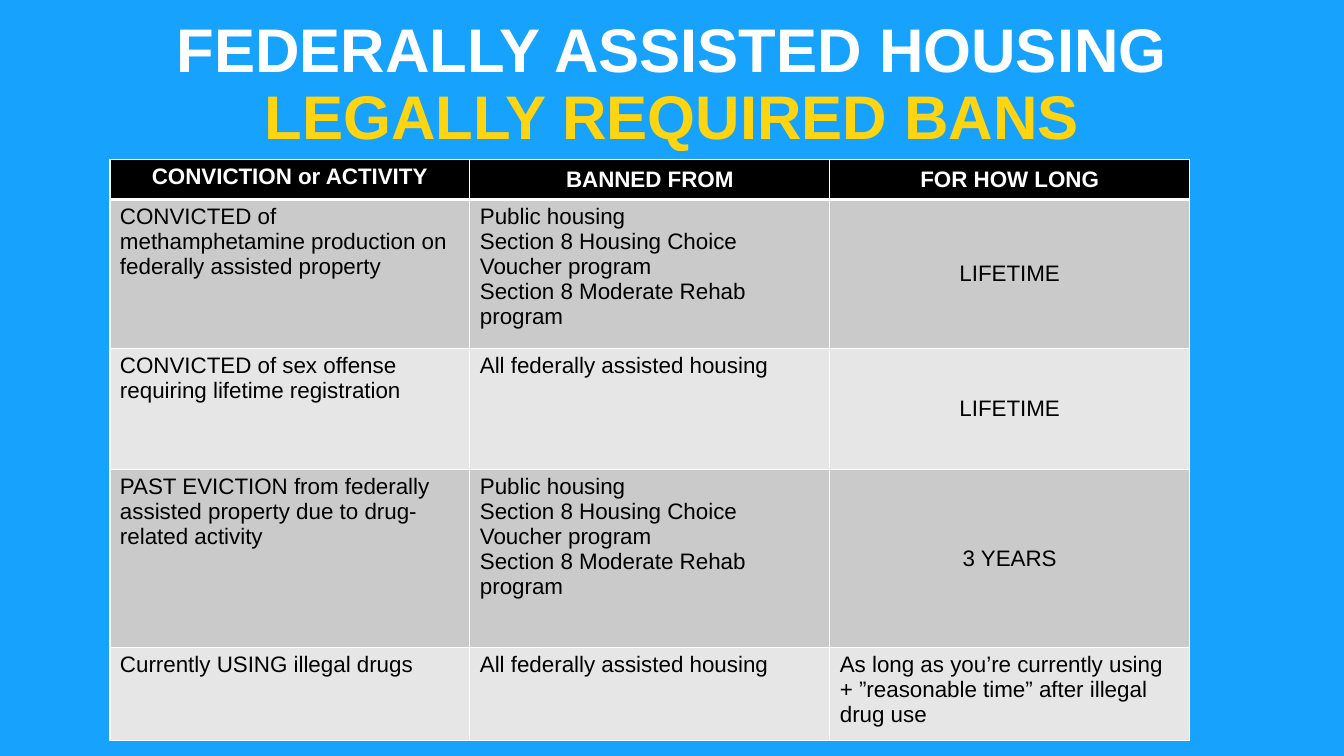
from lxml.etree import SubElement
from pptx import Presentation
from pptx.dml.color import RGBColor
from pptx.enum.text import MSO_ANCHOR as Anchor, MSO_AUTO_SIZE as AutoSize, PP_ALIGN as Align
from pptx.oxml.ns import qn
from pptx.util import Inches, Pt

BLUE = RGBColor(0x16, 0xA2, 0xFD)
YELLOW = RGBColor(0xFF, 0xD5, 0x12)
WHITE = RGBColor(0xFF, 0xFF, 0xFF)
BLACK = RGBColor(0, 0, 0)
DARK_GRAY = RGBColor(0xCA, 0xCA, 0xCA)
LIGHT_GRAY = RGBColor(0xE6, 0xE6, 0xE6)

PROGRAMS = (
    "Public housing\n"
    "Section 8 Housing Choice Voucher program\n"
    "Section 8 Moderate Rehab program"
)
ALL_HOUSING = "All federally assisted housing"
HEADERS = ["CONVICTION or ACTIVITY", "BANNED FROM", "FOR HOW LONG"]
BANS = [
    ("CONVICTED of methamphetamine production on federally assisted property", PROGRAMS, "LIFETIME"),
    ("CONVICTED of sex offense requiring lifetime registration", ALL_HOUSING, "LIFETIME"),
    ("PAST EVICTION from federally assisted property due to drug-related activity", PROGRAMS, "3 YEARS"),
    (
        "Currently USING illegal drugs",
        ALL_HOUSING,
        "As long as you’re currently using + ”reasonable time” after illegal drug use",
    ),
]
COLUMN_WIDTH = 3.57
ROW_HEIGHTS = [0.4, 1.48, 1.2, 1.76, 0.93]


def add_text(p, text, size=16, color=BLACK, bold=False, font="Arial"):
    r = p.add_run()
    r.text = text
    r.font.name = font
    r.font.size = Pt(size)
    r.font.bold = bold
    r.font.color.rgb = color


class SlideBuilder:
    def __init__(self, prs, background):
        self.slide = prs.slides.add_slide(prs.slide_layouts[5])
        self.slide.background.fill.solid()
        self.slide.background.fill.fore_color.rgb = background

    def title(self, lines, left, top, width, height):
        sp = self.slide.shapes.title
        sp.left, sp.top = Inches(left), Inches(top)
        sp.width, sp.height = Inches(width), Inches(height)
        tf = sp.text_frame
        tf.word_wrap = True
        tf.auto_size = AutoSize.NONE
        tf.vertical_anchor = Anchor.MIDDLE
        p = tf.paragraphs[0]
        p.alignment = Align.CENTER
        p.line_spacing = 0.9
        for i, (text, color) in enumerate(lines):
            if i:
                p.add_line_break()
            add_text(p, text, size=44, color=color, bold=True)

    def table(self, headers, rows, left, top, column_width, row_heights):
        frame = self.slide.shapes.add_table(
            len(rows) + 1, len(headers), Inches(left), Inches(top),
            Inches(column_width * len(headers)), Inches(sum(row_heights)),
        )
        table = frame.table
        for column in table.columns:
            column.width = Inches(column_width)
        for row, height in zip(table.rows, row_heights):
            row.height = Inches(height)
        for i, values in enumerate([headers, *rows]):
            header = i == 0
            fill = BLACK if header else DARK_GRAY if i % 2 else LIGHT_GRAY
            for j, text in enumerate(values):
                short_term = j == 2 and i < len(rows)
                self.cell(
                    table.cell(i, j), text, fill,
                    color=WHITE if header else BLACK,
                    bold=header,
                    align=Align.CENTER if header or short_term else Align.LEFT,
                    anchor=Anchor.MIDDLE if short_term or (header and j) else Anchor.TOP,
                    top_line=3 if i == 1 else 1,
                    bottom_line=3 if header else 1,
                )

    def cell(self, cell, text, fill, color, bold, align, anchor, top_line, bottom_line):
        self.borders(cell, lnL=1, lnR=1, lnT=top_line, lnB=bottom_line)
        cell.fill.solid()
        cell.fill.fore_color.rgb = fill
        cell.vertical_anchor = anchor
        tf = cell.text_frame
        for k, line in enumerate(text.split("\n")):
            p = tf.add_paragraph() if k else tf.paragraphs[0]
            p.alignment = align
            add_text(p, line, color=color, bold=bold)

    def borders(self, cell, **widths):
        tc_pr = cell._tc.get_or_add_tcPr()
        for side, width in widths.items():
            ln = SubElement(tc_pr, qn(f"a:{side}"), w=str(Pt(width)))
            fill = SubElement(ln, qn("a:solidFill"))
            SubElement(fill, qn("a:srgbClr"), val=str(WHITE))


def main():
    prs = Presentation()
    prs.slide_width, prs.slide_height = Inches(13.33), Inches(7.5)
    builder = SlideBuilder(prs, BLUE)
    builder.title(
        [("FEDERALLY ASSISTED HOUSING", WHITE), ("LEGALLY REQUIRED BANS", YELLOW)],
        0.92, 0.13, 11.5, 1.45,
    )
    builder.table(HEADERS, BANS, 1.09, 1.58, COLUMN_WIDTH, ROW_HEIGHTS)
    prs.save("out.pptx")


if __name__ == "__main__":
    main()
